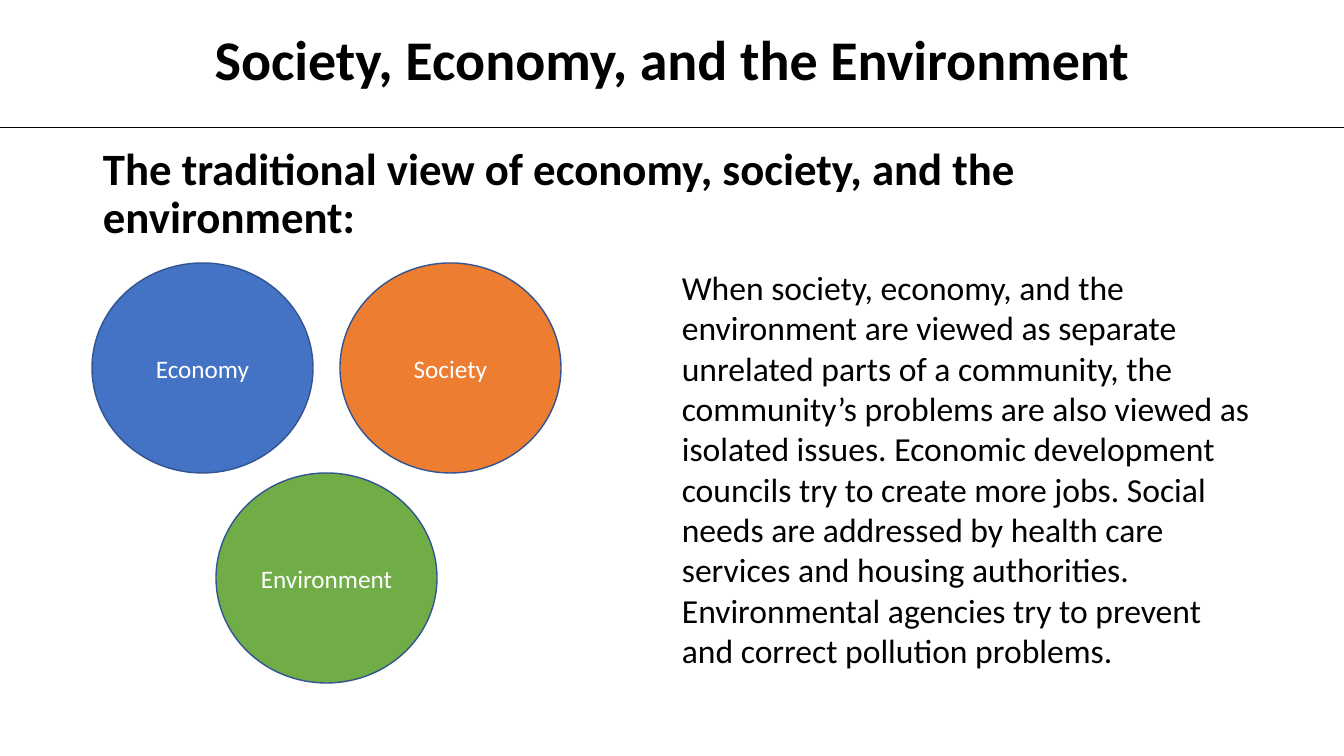
from lxml import etree
from pptx import Presentation
from pptx import util as u
from pptx.dml.color import RGBColor
from pptx.enum import shapes, text
from pptx.oxml.ns import qn

W, H = 1344, 756
SCALE = u.Inches(1) / 100.8
COLORS = {"black": "000000", "white": "FFFFFF", "outline": "325491",
          "blue": "4472C4", "orange": "ED7D31", "green": "70AD47"}

TITLE = "Society, Economy, and the Environment"
HEADING = "The traditional view of economy, society, and the environment:"
BODY = ("When society, economy, and the environment are viewed as separate "
        "unrelated parts of a community, the community’s problems are also "
        "viewed as isolated issues. Economic development councils try to "
        "create more jobs. Social needs are addressed by health care services "
        "and housing authorities. Environmental agencies try to prevent and "
        "correct pollution problems.")

CENTER = text.PP_ALIGN.CENTER
MIDDLE = text.MSO_ANCHOR.MIDDLE
TEXTS = [
    (HEADING, (93, 165, 1173, 60), {"size": 32, "bold": True},
     {"line_spacing": 0.9}, {"vertical_anchor": MIDDLE, "word_wrap": True}),
    (BODY, (672, 262, 589, 417), {"size": 24},
     {"space_before": u.Pt(6)}, {"word_wrap": True}),
    (TITLE, (199, 20, 946, 78), {"size": 40, "bold": True},
     {"alignment": CENTER, "space_before": u.Pt(1)}, {"word_wrap": False}),
]
CIRCLES = [("Economy", "blue", 0, 0), ("Society", "orange", 1, 0),
           ("Environment", "green", 0.5, 1)]
CIRCLE_LEFT, CIRCLE_TOP, CIRCLE_W, CIRCLE_H, STEP = 92, 263, 221, 210, 248
RULE_Y = 127


def px(*values):
    return [round(v * SCALE) for v in values]


def rgb(name):
    return RGBColor.from_string(COLORS[name])


def assign(obj, values):
    for name, value in values.items():
        setattr(obj, name, value)


def write(sp, words, font, para, frame, color="black"):
    tf = sp.text_frame
    assign(tf, frame)
    p = tf.paragraphs[0]
    assign(p, para)
    r = p.add_run()
    r.text = words
    assign(r.font, {**font, "size": u.Pt(font["size"]), "name": "Calibri"})
    r.font.color.rgb = rgb(color)


def add_circle(slide, label, color, col, row):
    sp = slide.shapes.add_shape(
        shapes.MSO_SHAPE.OVAL,
        *px(CIRCLE_LEFT + col * STEP, CIRCLE_TOP + row * CIRCLE_H, CIRCLE_W, CIRCLE_H))
    sp.shadow.inherit = False
    sp.fill.solid()
    sp.fill.fore_color.rgb = rgb(color)
    sp.line.color.rgb = rgb("outline")
    sp.line.width = u.Pt(1)
    write(sp, label, {"size": 18}, {"alignment": CENTER},
          {"vertical_anchor": MIDDLE, "word_wrap": True}, "white")


def add_rule(slide):
    line = slide.shapes.add_connector(
        shapes.MSO_CONNECTOR.STRAIGHT, *px(0, RULE_Y, W, RULE_Y))
    line.line.color.rgb = rgb("black")
    line.line.width = u.Pt(0.5)
    etree.SubElement(line._element.spPr, qn("a:effectLst"))


def main():
    prs = Presentation()
    prs.slide_width, prs.slide_height = px(W, H)
    slide = prs.slides.add_slide(prs.slide_layouts[6])
    for circle in CIRCLES:
        add_circle(slide, *circle)
    for words, box, font, para, frame in TEXTS:
        write(slide.shapes.add_textbox(*px(*box)), words, font, para, frame)
    add_rule(slide)
    prs.save("out.pptx")


if __name__ == "__main__":
    main()
